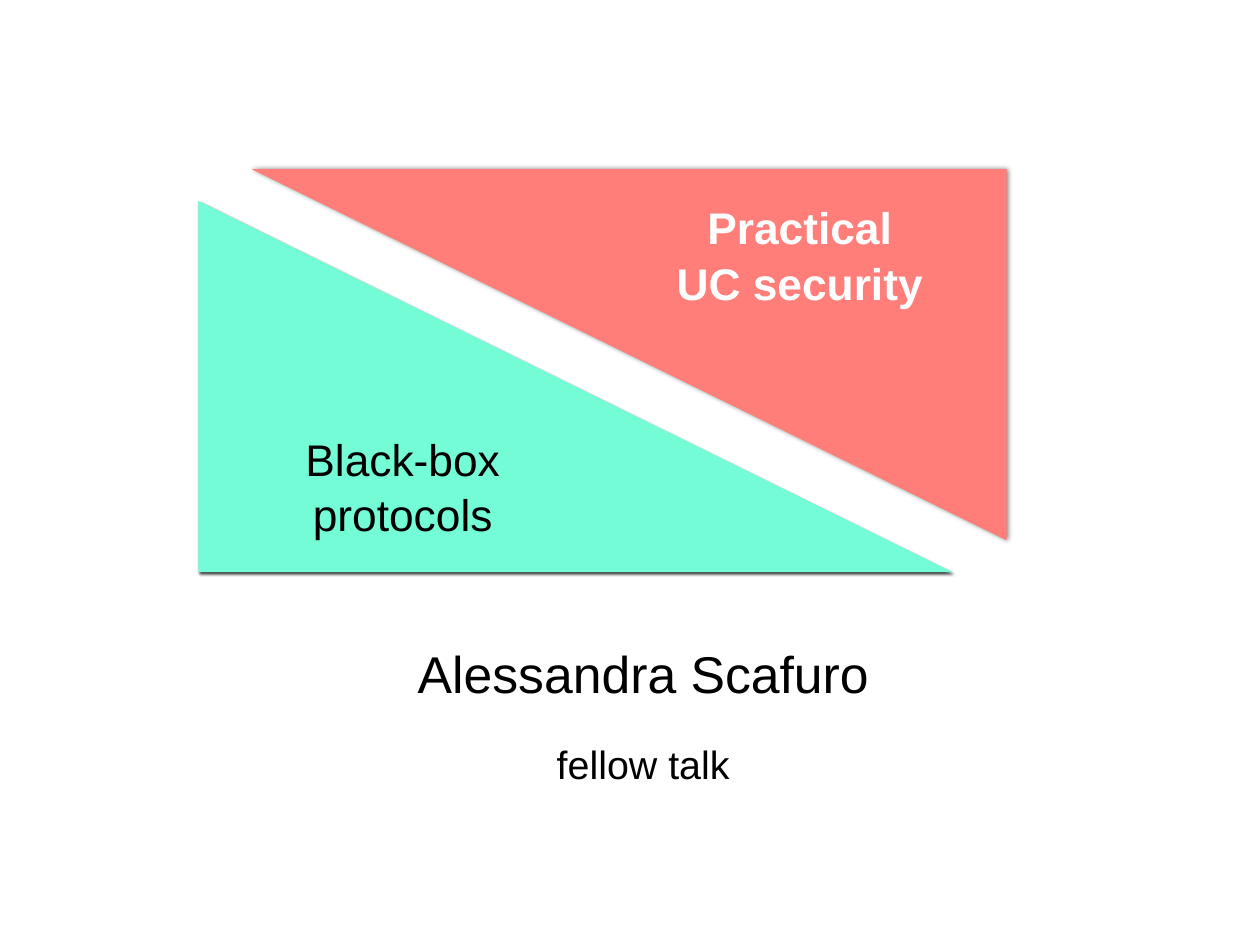
import pptx
import pptx.util
import pptx.dml.color
import pptx.enum.text
import pptx.oxml
import pptx.oxml.ns

PX = 9144  # 100 px to the inch
COLORS = {"mint": "73FCD6", "coral": "FF7E79", "black": "000000", "white": "FFFFFF"}


def rgb(name):
    return pptx.dml.color.RGBColor.from_string(COLORS[name])


deck = pptx.Presentation()
deck.slide_width = 1422 * PX
deck.slide_height = 1067 * PX
slide = deck.slides.add_slide(deck.slide_layouts[6])

# Two facing triangles: corners, fill, shadow (opacity %, blur pt, distance pt, angle)
wedges = [
    ([(224, 227), (224, 646), (1075, 646)], "mint", (79, 2, 2, 40)),
    ([(1136, 610), (1136, 191), (284, 191)], "coral", (50, 4, 1, 0)),
]
for points, color, (alpha, blur, dist, angle) in wedges:
    pen = slide.shapes.build_freeform(*points[0], scale=PX)
    pen.add_line_segments(points[1:], close=True)
    wedge = pen.convert_to_shape()
    wedge.fill.solid()
    wedge.fill.fore_color.rgb = rgb(color)
    wedge.line.fill.background()
    wedge.shadow.inherit = False
    effects = wedge.element.spPr.find(pptx.oxml.ns.qn("a:effectLst"))
    effects.append(pptx.oxml.parse_xml(
        f'<a:outerShdw {pptx.oxml.ns.nsdecls("a")} blurRad="{blur * 12700}" '
        f'dist="{dist * 12700}" dir="{angle * 60000}" rotWithShape="0">'
        f'<a:srgbClr val="{COLORS["black"]}"><a:alpha val="{alpha * 1000}"/></a:srgbClr>'
        '</a:outerShdw>'))

# Labels: box, lines, size, colour, bold, wrap
labels = [
    ((293, 482, 323, 131), ["Black-box", "protocols"], 36, "black", False, True),
    ((712, 221, 381, 131), ["Practical", "UC security"], 36, "white", True, True),
    ((464, 718, 524, 81), ["Alessandra Scafuro"], 42, "black", False, False),
    ((622, 829, 208, 64), ["fellow talk"], 32, "black", False, False),
]
for box, lines, size, color, bold, wrap in labels:
    frame = slide.shapes.add_textbox(*[n * PX for n in box]).text_frame
    layout = {
        "word_wrap": wrap,
        "auto_size": pptx.enum.text.MSO_AUTO_SIZE.SHAPE_TO_FIT_TEXT,
        "vertical_anchor": pptx.enum.text.MSO_ANCHOR.MIDDLE,
    }
    for side in ("left", "top", "right", "bottom"):
        layout[f"margin_{side}"] = 6 * PX
    for key, value in layout.items():
        setattr(frame, key, value)
    frame.text = "\n".join(lines)
    style = {"name": "Arial", "size": pptx.util.Pt(size), "bold": bold}
    for para in frame.paragraphs:
        para.alignment = pptx.enum.text.PP_ALIGN.CENTER
        para.line_spacing = 1.04
        font = para.runs[0].font
        for key, value in style.items():
            setattr(font, key, value)
        font.color.rgb = rgb(color)

deck.save("out.pptx")
